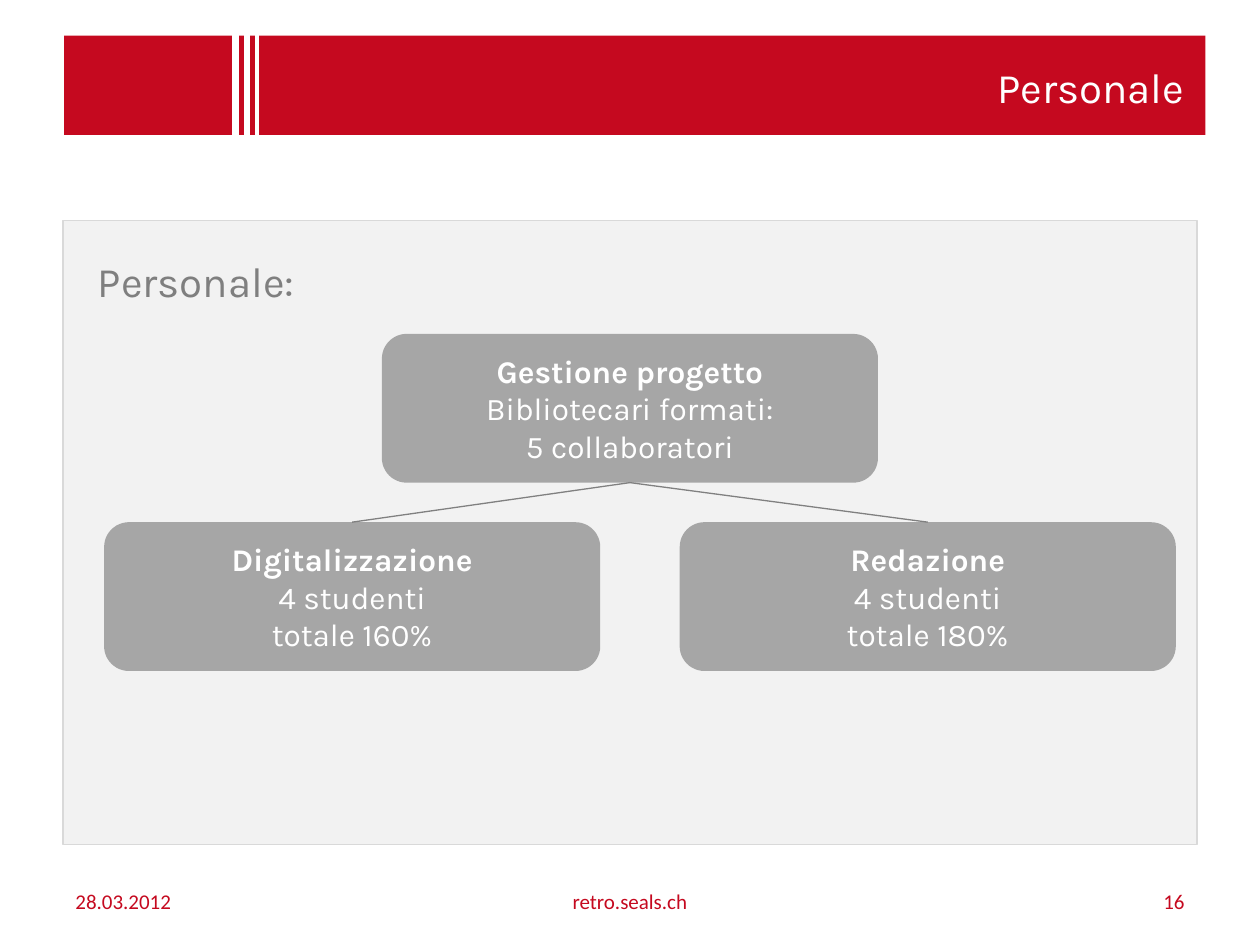
"""Build the staff organisation slide."""
from typing import NamedTuple

from lxml import etree
from pptx import Presentation
from pptx import util as u
from pptx.dml.color import RGBColor
from pptx.enum import shapes, text
from pptx.oxml import ns

Pt = u.Pt
RED = RGBColor(0xC5, 0x09, 0x1F)
WHITE = RGBColor(0xFF, 0xFF, 0xFF)
PANEL_FILL = RGBColor(0xF2, 0xF2, 0xF2)
PANEL_EDGE = RGBColor(0xD9, 0xD9, 0xD9)
HEADING_GREY = RGBColor(0x7F, 0x7F, 0x7F)
TEAM_GREY = RGBColor(0xA6, 0xA6, 0xA6)
LINK_GREY = RGBColor(0x80, 0x80, 0x80)
LEFT, CENTER, RIGHT = text.PP_ALIGN.LEFT, text.PP_ALIGN.CENTER, text.PP_ALIGN.RIGHT
TOP, MIDDLE = text.MSO_ANCHOR.TOP, text.MSO_ANCHOR.MIDDLE


class Box(NamedTuple):
    left: float
    top: float
    width: float
    height: float

    def lengths(self) -> list:
        return [Pt(value) for value in self]


class Team(NamedTuple):
    left: float
    top: float
    lines: list


class Stripe(NamedTuple):
    x: float
    width: float


class Footer(NamedTuple):
    left: float
    width: float
    words: str
    align: text.PP_ALIGN


STRIPES = [Stripe(134.6, 4.25), Stripe(141.1, 3.5), Stripe(146.9, 2)]
MANAGEMENT = Team(218.2, 190.8, ["Gestione progetto", "Bibliotecari formati:", "5 collaboratori"])
GROUPS = [
    Team(59.5, 298.4, ["Digitalizzazione", "4 studenti", "totale 160%"]),
    Team(388.4, 298.4, ["Redazione", "4 studenti", "totale 180%"]),
]
FOOTERS = [
    Footer(36, 168, "28.03.2012", LEFT),
    Footer(246, 228, "retro.seals.ch", CENTER),
    Footer(516, 168, "16", RIGHT),
]


def write(shape, lines: list, *, size: float, color: RGBColor, font: str = "Karla",
          align=LEFT, anchor=MIDDLE, bold_first: bool = False) -> None:
    frame = shape.text_frame
    frame.word_wrap = True
    frame.auto_size = text.MSO_AUTO_SIZE.NONE
    frame.vertical_anchor = anchor
    for index, line in enumerate(lines):
        paragraph = frame.paragraphs[0] if index == 0 else frame.add_paragraph()
        paragraph.alignment = align
        run = paragraph.add_run()
        run.text = line
        run.font.name, run.font.size = font, Pt(size)
        run.font.color.rgb = color
        run.font.bold = bold_first and index == 0


def add_block(slide, box: Box, fill: RGBColor, kind=shapes.MSO_SHAPE.RECTANGLE):
    block = slide.shapes.add_shape(kind, *box.lengths())
    block.shadow.inherit = False
    block.fill.solid()
    block.fill.fore_color.rgb = fill
    block.line.fill.background()
    return block


def add_line(slide, start: tuple, end: tuple, color: RGBColor, width: float):
    line = slide.shapes.add_connector(
        shapes.MSO_CONNECTOR.STRAIGHT, *[Pt(value) for value in start + end])
    line.line.color.rgb = color
    line.line.width = Pt(width)
    etree.SubElement(line.element.spPr, ns.qn("a:effectLst"))
    return line


def add_team(slide, team: Team):
    block = add_block(slide, Box(team.left, team.top, 283.5, 85), TEAM_GREY,
                      shapes.MSO_SHAPE.ROUNDED_RECTANGLE)
    write(block, team.lines, size=18, color=WHITE, align=CENTER, bold_first=True)
    return block


def add_header(slide) -> None:
    add_block(slide, Box(36.7, 20.4, 652.2, 56.7), RED)
    for stripe in STRIPES:
        last = add_line(slide, (stripe.x, 15.5), (stripe.x, 77.5), WHITE, stripe.width)
    title = slide.shapes.title
    title.left, title.top, title.width, title.height = Box(36, 21.6, 648, 55.5).lengths()
    write(title, ["Personale"], size=24, color=WHITE, align=RIGHT)
    last.element.addnext(title.element)


def add_panel(slide) -> None:
    panel = add_block(slide, Box(36, 126, 648, 356.4), PANEL_FILL)
    panel.line.color.rgb = PANEL_EDGE
    panel.line.width = Pt(0.75)
    frame = panel.text_frame
    frame.margin_left = frame.margin_top = frame.margin_right = frame.margin_bottom = Pt(20)
    write(panel, ["Personale:"], size=24, color=HEADING_GREY, anchor=TOP)


def main() -> None:
    deck = Presentation()
    deck.slide_width, deck.slide_height = Pt(720), Pt(540)
    slide = deck.slides.add_slide(deck.slide_layouts[5])
    add_header(slide)
    add_panel(slide)
    for footer in FOOTERS:
        box = slide.shapes.add_textbox(*Box(footer.left, 500.5, footer.width, 28.75).lengths())
        write(box, [footer.words], size=12, color=RED, font="Calibri", align=footer.align)
    management = add_team(slide, MANAGEMENT)
    for group in [add_team(slide, team) for team in GROUPS]:
        link = add_line(slide, (0, 0), (0, 0), LINK_GREY, 0.75)
        link.begin_connect(management, 2)
        link.end_connect(group, 0)
    deck.save("out.pptx")


if __name__ == "__main__":
    main()
